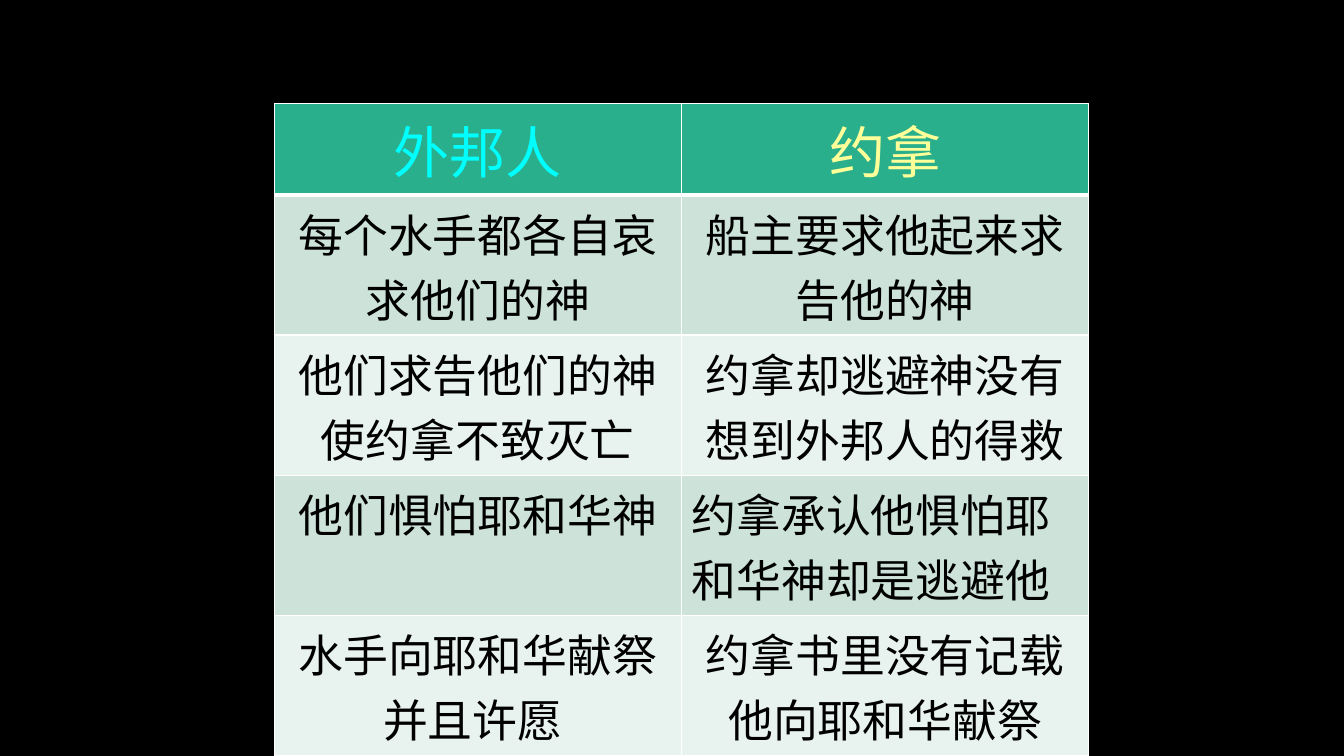
from dataclasses import dataclass

from lxml.etree import SubElement
from pptx import Presentation
from pptx.dml.color import RGBColor as Color
from pptx.enum.text import PP_ALIGN as Align
from pptx.oxml.ns import qn
from pptx.table import _Cell as Cell
from pptx.util import Inches, Pt


@dataclass(frozen=True)
class Theme:
    font: str = "Noto Sans CJK SC"
    back: str = "000000"
    head: str = "29AF8C"
    bands: tuple[str, str] = ("CDE3DA", "E8F2EE")
    titles: tuple[str, str] = ("00FFFF", "FFFF99")
    ink: str = "000000"
    rule: str = "FFFFFF"
    big: int = 40
    body: int = 32
    thin: int = 1
    thick: int = 3


@dataclass(frozen=True)
class Entry:
    text: str
    align: Align = Align.CENTER


@dataclass(frozen=True)
class Look:
    fill: str
    ink: str
    size: int
    base: int


THEME = Theme()
LEFT, TOP, WIDTH = 2.72, 1.03, 4.04
HEIGHTS = (0.86, 1.1, 1.1, 1.1, 1.13)
ROWS = (
    (Entry("外邦人"), Entry("约拿")),
    (Entry("每个水手都各自哀求他们的神"), Entry("船主要求他起来求告他的神")),
    (Entry("他们求告他们的神使约拿不致灭亡"), Entry("约拿却逃避神没有想到外邦人的得救")),
    (Entry("他们惧怕耶和华神"), Entry("约拿承认他惧怕耶和华神却是逃避他", Align.LEFT)),
    (Entry("水手向耶和华献祭并且许愿 "), Entry("约拿书里没有记载他向耶和华献祭")),
)


def pick_look(row: int, col: int) -> Look:
    if row == 0:
        return Look(THEME.head, THEME.titles[col], THEME.big, THEME.thick)
    return Look(THEME.bands[(row - 1) % 2], THEME.ink, THEME.body, THEME.thin)


def add_rules(cell: Cell, base: int) -> None:
    props = cell._tc.get_or_add_tcPr()
    sides = {"lnL": THEME.thin, "lnR": THEME.thin, "lnT": THEME.thin, "lnB": base}
    for side, width in sides.items():
        line = SubElement(props, qn(f"a:{side}"), w=str(Pt(width)))
        fill = SubElement(line, qn("a:solidFill"))
        SubElement(fill, qn("a:srgbClr"), val=THEME.rule)


def draw_cell(cell: Cell, entry: Entry, look: Look) -> None:
    add_rules(cell, look.base)
    cell.fill.solid()
    cell.fill.fore_color.rgb = Color.from_string(look.fill)
    cell.text = entry.text
    para = cell.text_frame.paragraphs[0]
    para.alignment = entry.align
    font = para.font
    font.name = THEME.font
    font.size = Pt(look.size)
    font.bold = False
    font.color.rgb = Color.from_string(look.ink)
    SubElement(font._element, qn("a:ea"), typeface=THEME.font)


def main() -> None:
    deck = Presentation()
    deck.slide_width, deck.slide_height = Inches(13.33), Inches(7.5)
    slide = deck.slides.add_slide(deck.slide_layouts[6])
    slide.background.fill.solid()
    slide.background.fill.fore_color.rgb = Color.from_string(THEME.back)

    count = len(ROWS[0])
    frame = slide.shapes.add_table(
        len(ROWS), count, Inches(LEFT), Inches(TOP),
        Inches(WIDTH * count), Inches(sum(HEIGHTS)),
    )
    table = frame.table
    table.first_row = table.horz_banding = False
    for col in table.columns:
        col.width = Inches(WIDTH)
    for row, (entries, height) in enumerate(zip(ROWS, HEIGHTS)):
        table.rows[row].height = Inches(height)
        for col, entry in enumerate(entries):
            draw_cell(table.cell(row, col), entry, pick_look(row, col))
    deck.save("out.pptx")


if __name__ == "__main__":
    main()
